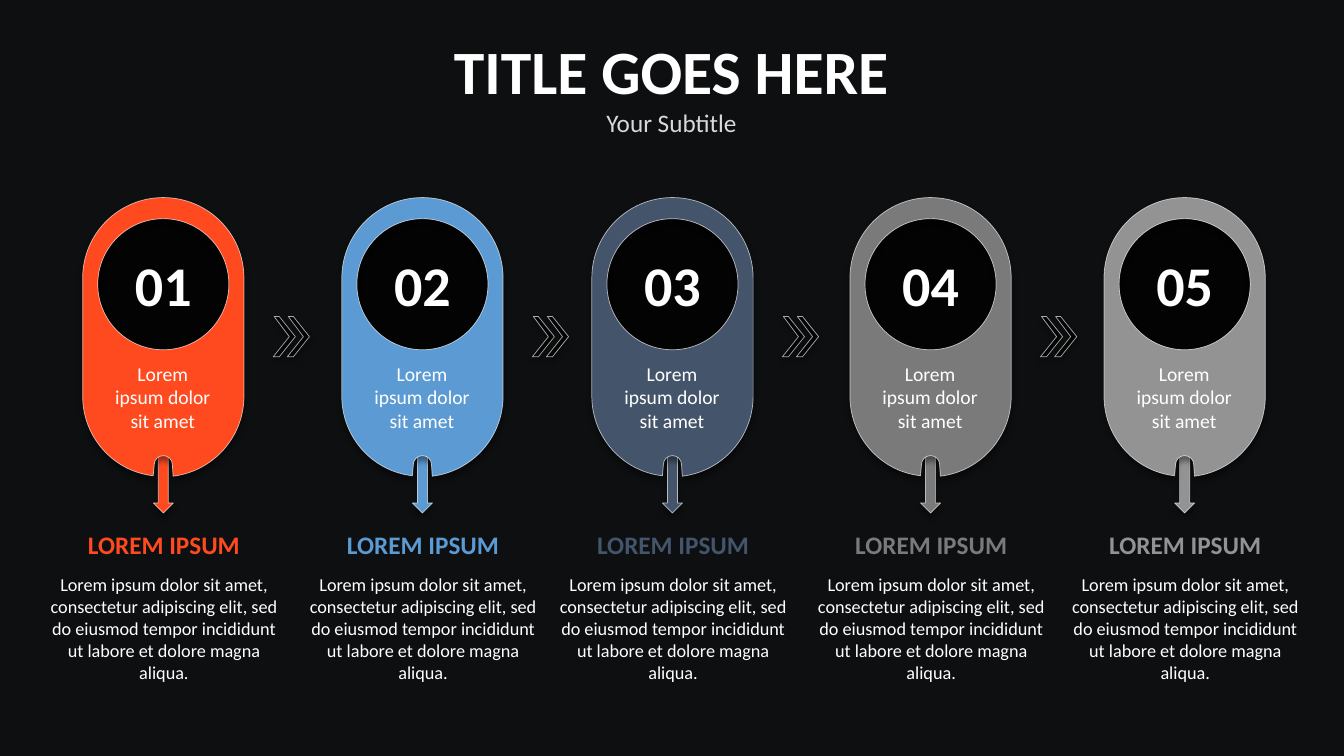
import math

from lxml import etree
from pptx import Presentation
from pptx import util as u
from pptx.dml import color
from pptx.enum import shapes, text
from pptx.oxml import ns

FONT = "Calibri"
WHITE = "FFFFFF"
BLACK = "000000"
STEPS = [
    ("01", 1.62, "FE4A1E"),
    ("02", 4.19, "5C9AD3"),
    ("03", 6.67, "44546B"),
    ("04", 9.23, "7A7A7A"),
    ("05", 11.75, "939393"),
]
HEADING = "LOREM IPSUM"
CAPTION = "Lorem ipsum dolor sit amet"
DESCRIPTION = (
    "Lorem ipsum dolor sit amet, consectetur adipiscing elit, sed do eiusmod "
    "tempor incididunt ut labore et dolore magna aliqua."
)


def rgb(value):
    return color.RGBColor.from_string(value)


def add_child(parent, tag, **attributes):
    child = etree.SubElement(parent, ns.qn(tag))
    for name, value in attributes.items():
        child.set(name, str(value))
    return child


def set_fill(fill, value, opacity=100):
    fill.solid()
    fill.fore_color.rgb = rgb(value)
    if opacity < 100:
        solid = fill._xPr.find(ns.qn("a:solidFill"))
        add_child(solid[0], "a:alpha", val=opacity * 1000)


def add_shadow(shape):
    shape.shadow.inherit = False
    effects = shape._element.spPr.find(ns.qn("a:effectLst"))
    shadow = add_child(effects, "a:outerShdw", blurRad=u.Pt(4), dist=u.Pt(3),
                       dir=90 * 60000, algn="t", rotWithShape=0)
    shade = add_child(shadow, "a:srgbClr", val=BLACK)
    add_child(shade, "a:alpha", val=40000)


def style_outlined(shape, fill, opacity=100):
    set_fill(shape.fill, fill, opacity)
    shape.line.width = u.Pt(0.5)
    set_fill(shape.line.fill, WHITE, 65)
    add_shadow(shape)


def write(frame, content, size=14, colour=WHITE, bold=False, before=0, first=True):
    paragraph = frame.paragraphs[0] if first else frame.add_paragraph()
    paragraph.alignment = text.PP_ALIGN.CENTER
    if before:
        paragraph.space_before = u.Pt(before)
    run = paragraph.add_run()
    run.text = content
    run.font.name = FONT
    run.font.size = u.Pt(size)
    run.font.bold = bold
    run.font.color.rgb = rgb(colour)


def add_text_box(container, left, top, width, height):
    box = container.add_textbox(u.Inches(left), u.Inches(top),
                                u.Inches(width), u.Inches(height))
    frame = box.text_frame
    frame.word_wrap = True
    frame.auto_size = text.MSO_AUTO_SIZE.SHAPE_TO_FIT_TEXT
    frame.margin_left = frame.margin_right = u.Inches(0.07)
    frame.margin_top = frame.margin_bottom = u.Inches(0.03)
    return frame


def add_preset(container, kind, left, top, width, height):
    return container.add_shape(kind, u.Inches(left), u.Inches(top),
                               u.Inches(width), u.Inches(height))


def arc(x, y, radius, start, end):
    pieces = math.ceil(abs(end - start) / 90)
    step = math.radians((end - start) / pieces)
    pull = 4 / 3 * math.tan(step / 4)
    points = []
    for piece in range(pieces):
        a = math.radians(start) + piece * step
        b = a + step
        points += [
            (x + radius * (math.cos(a) - pull * math.sin(a)),
             y + radius * (math.sin(a) + pull * math.cos(a))),
            (x + radius * (math.cos(b) + pull * math.sin(b)),
             y + radius * (math.sin(b) - pull * math.cos(b))),
            (x + radius * math.cos(b), y + radius * math.sin(b)),
        ]
    return points


def straight(x, y):
    return [(x, y)] * 3


def add_outline(container, contours):
    contours = [[(u.Inches(x), u.Inches(y)) for x, y in contour]
                for contour in contours]
    builder = container.build_freeform(*contours[0][0], scale=1.0)
    for index, contour in enumerate(contours):
        if index:
            builder.move_to(*contour[0])
        builder.add_line_segments(contour[1:], close=True)
    return builder.convert_to_shape()


def bend_lines(shape):
    lines = list(shape._element.iter(ns.qn("a:lnTo")))
    for index in range(0, len(lines), 3):
        curve = etree.Element(ns.qn("a:cubicBezTo"))
        lines[index].addprevious(curve)
        for line in lines[index:index + 3]:
            curve.append(line[0])
            line.getparent().remove(line)


def add_title(slide):
    title = slide.shapes.title
    title.left, title.top = u.Inches(3.65), u.Inches(0.28)
    title.width, title.height = u.Inches(6.02), u.Inches(1.14)
    frame = title.text_frame
    frame.auto_size = text.MSO_AUTO_SIZE.NONE
    frame.vertical_anchor = text.MSO_ANCHOR.TOP
    write(frame, "TITLE GOES HERE", size=44, bold=True)
    write(frame, "Your Subtitle", size=18, colour="D9D9D9", first=False)


def add_capsule(container, center, colour):
    hole = [(center + 0.65, 2.82)] + arc(center, 2.82, 0.65, 0, 360)
    body = ([(center - 0.8, 2.76)]
            + arc(center, 2.76, 0.8, 180, 360)
            + straight(center + 0.8, 3.93)
            + arc(center, 3.93, 0.8, 0, 83)
            + straight(center + 0.09, 4.61)
            + arc(center, 4.61, 0.09, 0, -180)
            + straight(center - 0.1, 4.72)
            + arc(center, 3.93, 0.8, 97, 180))
    capsule = add_outline(container, [hole, body])
    bend_lines(capsule)
    style_outlined(capsule, colour)


def add_badge(slide, number, center, colour):
    group = slide.shapes.add_group_shape().shapes
    disc = add_preset(group, shapes.MSO_SHAPE.OVAL, center - 0.65, 2.17, 1.3, 1.3)
    disc.shadow.inherit = False
    set_fill(disc.fill, BLACK, 75)
    disc.line.fill.background()
    disc.text_frame.vertical_anchor = text.MSO_ANCHOR.MIDDLE
    write(disc.text_frame, number, size=40, bold=True)
    add_capsule(group, center, colour)
    write(add_text_box(group, center - 0.56, 3.56, 1.11, 0.77), CAPTION)


def add_step(slide, number, center, colour):
    arrow = add_preset(slide.shapes, shapes.MSO_SHAPE.DOWN_ARROW,
                       center - 0.1, 4.36, 0.2, 0.73)
    style_outlined(arrow, colour)
    frame = add_text_box(slide.shapes, center - 1.22, 5.22, 2.45, 1.6)
    write(frame, HEADING, size=18, colour=colour, bold=True)
    write(frame, DESCRIPTION, size=13, before=10, first=False)
    add_badge(slide, number, center, colour)


def add_chevrons(slide, left):
    profile = [(0, 3.54), (0.16, 3.34), (0.01, 3.14),
               (0.06, 3.14), (0.22, 3.34), (0.06, 3.54)]
    contours = [[(left + shift + x, y) for x, y in profile] for shift in (0.14, 0)]
    style_outlined(add_outline(slide.shapes, contours), BLACK, 75)


def main():
    presentation = Presentation()
    presentation.slide_width = u.Inches(13.33)
    presentation.slide_height = u.Inches(7.5)
    slide = presentation.slides.add_slide(presentation.slide_layouts[5])
    set_fill(slide.background.fill, "0E0F11")
    add_title(slide)
    for index, (number, center, colour) in enumerate(STEPS):
        add_step(slide, number, center, colour)
        if index < len(STEPS) - 1:
            add_chevrons(slide, center + 1.09)
    presentation.save("out.pptx")


if __name__ == "__main__":
    main()
